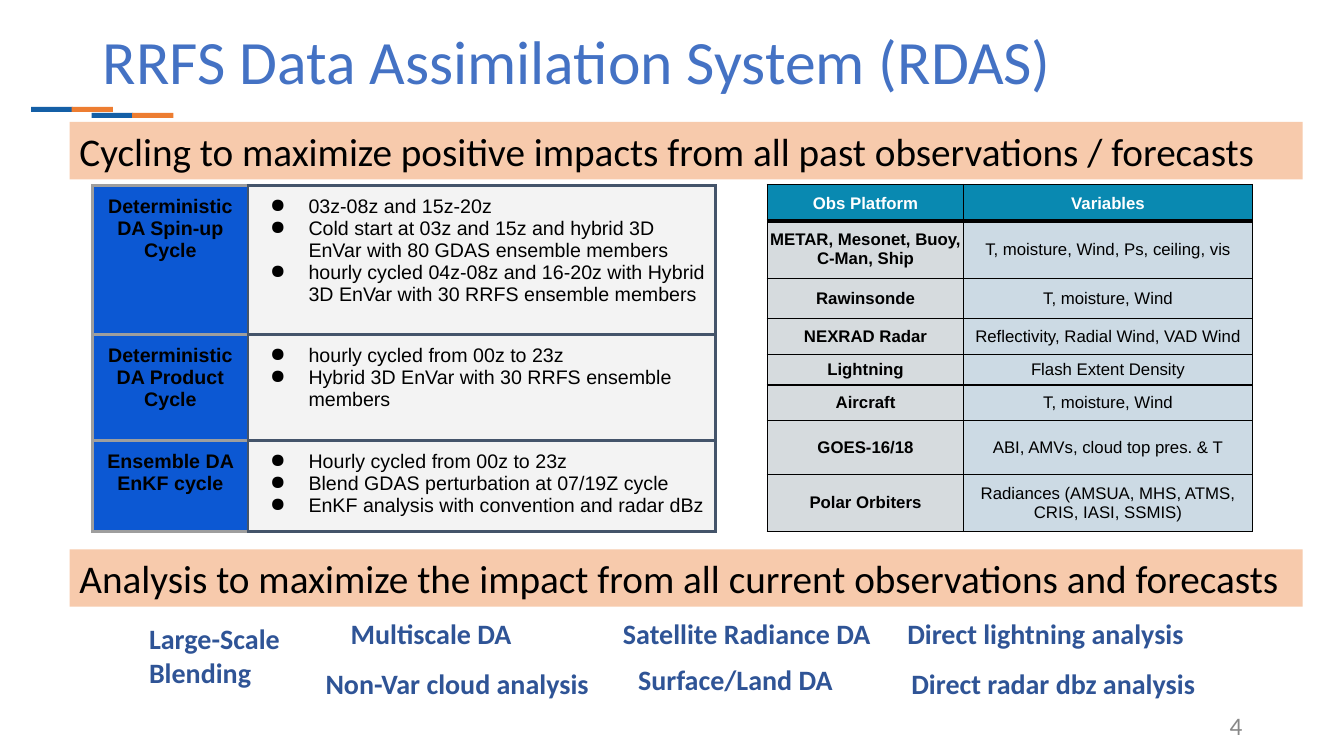
from lxml.etree import SubElement
from pptx import Presentation
from pptx.dml.color import RGBColor
from pptx.enum.shapes import MSO_SHAPE
from pptx.enum.text import MSO_ANCHOR, MSO_AUTO_SIZE, PP_ALIGN
from pptx.oxml.ns import qn
from pptx.util import Pt

PX = 9144
WHITE = RGBColor(0xFF, 0xFF, 0xFF)
BLACK = RGBColor(0x00, 0x00, 0x00)
TITLE_BLUE = RGBColor(0x44, 0x72, 0xC4)
MARK_BLUE = RGBColor(0x14, 0x5F, 0xA6)
MARK_ORANGE = RGBColor(0xED, 0x7D, 0x31)
BANNER_PEACH = RGBColor(0xF7, 0xCA, 0xAC)
TOPIC_BLUE = RGBColor(0x2F, 0x54, 0x96)
NUMBER_GRAY = RGBColor(0x88, 0x88, 0x88)
CYCLE_BLUE = RGBColor(0x0C, 0x58, 0xD3)
CYCLE_GRAY = RGBColor(0xF3, 0xF3, 0xF3)
EDGE_GRAY = RGBColor(0x9E, 0x9E, 0x9E)
EDGE_SLATE = RGBColor(0x44, 0x54, 0x6A)
HEADER_TEAL = RGBColor(0x09, 0x89, 0xB1)
PLATFORM_GRAY = RGBColor(0xD6, 0xDB, 0xDE)
VARIABLE_BLUE = RGBColor(0xCC, 0xDA, 0xE4)

CYCLES = [
    (148, "Deterministic DA Spin-up Cycle", [
        "03z-08z and 15z-20z",
        "Cold start at 03z and 15z and hybrid 3D EnVar with 80 GDAS ensemble members",
        "hourly cycled 04z-08z and 16-20z with Hybrid 3D EnVar with 30 RRFS ensemble members"]),
    (105, "Deterministic DA Product Cycle", [
        "hourly cycled from 00z to 23z",
        "Hybrid 3D EnVar with 30 RRFS ensemble members"]),
    (86, "Ensemble DA EnKF cycle", [
        "Hourly cycled from 00z to 23z",
        "Blend GDAS perturbation at 07/19Z cycle",
        "EnKF analysis with convention and radar dBz"]),
]
OBSERVATIONS = [
    (36, "Obs Platform", "Variables"),
    (57, "METAR, Mesonet, Buoy, C-Man, Ship", "T, moisture, Wind, Ps, ceiling, vis"),
    (40, "Rawinsonde", "T, moisture, Wind"),
    (36, "NEXRAD Radar", "Reflectivity, Radial Wind, VAD Wind"),
    (30, "Lightning", "Flash Extent Density"),
    (35, "Aircraft", "T, moisture, Wind"),
    (54, "GOES-16/18", "ABI, AMVs, cloud top pres. & T"),
    (56, "Polar Orbiters", "Radiances (AMSUA, MHS, ATMS, CRIS, IASI, SSMIS)"),
]
TOPICS = [
    ("Large-Scale Blending", 138, 5, 159, 77, {}),
    ("Multiscale DA", 318, 0, 219, 44, {"alignment": PP_ALIGN.CENTER}),
    ("Surface/Land DA", 623, 49, 259, 40, {"line_spacing": 0.9}),
    ("Satellite Radiance DA", 608, 0, 268, 44, {}),
    ("Direct lightning analysis", 890, 0, 322, 44, {}),
    ("Non-Var cloud analysis", 313, 49, 298, 44, {}),
    ("Direct radar dbz analysis", 894, 49, 308, 44, {}),
]


def apply(target, values):
    for name, value in values.items():
        setattr(target, name, value)


def scaled(*lengths):
    return [length * PX for length in lengths]


def write(paragraph, text, size, color, name="Calibri", bold=False, **layout):
    apply(paragraph, layout)
    run = paragraph.add_run()
    run.text = text
    apply(run.font, {"size": Pt(size), "name": name, "bold": bold})
    run.font.color.rgb = color


def add_text(slide, box, text, size, color, anchor=MSO_ANCHOR.TOP, **values):
    shape = slide.shapes.add_textbox(*scaled(*box))
    apply(shape.text_frame, {"word_wrap": True, "vertical_anchor": anchor})
    write(shape.text_frame.paragraphs[0], text, size, color, **values)


def add_block(slide, box, color):
    shape = slide.shapes.add_shape(MSO_SHAPE.RECTANGLE, *scaled(*box))
    shape.shadow.inherit = False
    shape.fill.solid()
    shape.fill.fore_color.rgb = color
    shape.line.fill.background()
    return shape


def add_title(slide, box, text):
    title = slide.shapes.title
    apply(title, dict(zip(("left", "top", "width", "height"), scaled(*box))))
    apply(title.text_frame, {"word_wrap": True, "auto_size": MSO_AUTO_SIZE.NONE,
                             "vertical_anchor": MSO_ANCHOR.MIDDLE})
    write(title.text_frame.paragraphs[0], text, 44, TITLE_BLUE,
          alignment=PP_ALIGN.LEFT, line_spacing=0.9)


def add_marks(slide, left, top):
    for shift_x, shift_y in ((0, 0), (60, 6)):
        for index, color in enumerate((MARK_BLUE, MARK_ORANGE)):
            add_block(slide, (left + shift_x + 40 * index, top + shift_y, 41, 5), color)


def add_banner(slide, box, text):
    frame = add_block(slide, box, BANNER_PEACH).text_frame
    apply(frame, {"word_wrap": True, "vertical_anchor": MSO_ANCHOR.TOP})
    write(frame.paragraphs[0], text, 28, BLACK, alignment=PP_ALIGN.LEFT)


def add_grid(slide, left, top, widths, heights):
    frame = slide.shapes.add_table(len(heights), len(widths),
                                   *scaled(left, top, sum(widths), sum(heights)))
    table = frame.table
    apply(table, {"first_row": False, "horz_banding": False})
    for column, width in zip(table.columns, widths):
        column.width = width * PX
    for row, height in zip(table.rows, heights):
        row.height = height * PX
    return table


def format_cell(cell, fill, edges, margin_x, margin_y, anchor):
    properties = cell._tc.get_or_add_tcPr()
    for side in "LRTB":
        color, width = edges[side]
        line = SubElement(properties, qn(f"a:ln{side}"), w=str(Pt(width)))
        SubElement(SubElement(line, qn("a:solidFill")), qn("a:srgbClr"), val=str(color))
    cell.fill.solid()
    cell.fill.fore_color.rgb = fill
    apply(cell, {"margin_left": margin_x * PX, "margin_right": margin_x * PX,
                 "margin_top": margin_y * PX, "margin_bottom": margin_y * PX,
                 "vertical_anchor": anchor})


def add_bullet(paragraph):
    properties = paragraph._p.get_or_add_pPr()
    properties.set("marL", str(50 * PX))
    properties.set("indent", str(-38 * PX))
    color = SubElement(properties, qn("a:buClr"))
    SubElement(color, qn("a:srgbClr"), val=str(BLACK))
    SubElement(properties, qn("a:buChar"), char="●")


def add_cycle_table(slide, left, top):
    table = add_grid(slide, left, top, (154, 464), [cycle[0] for cycle in CYCLES])
    slate = dict.fromkeys("LRTB", (EDGE_SLATE, 2.25))
    gray = {**dict.fromkeys("LTB", (EDGE_GRAY, 2.25)), "R": (EDGE_SLATE, 2.25)}
    for row, (_, name, steps) in enumerate(CYCLES):
        name_cell, steps_cell = table.cell(row, 0), table.cell(row, 1)
        format_cell(name_cell, CYCLE_BLUE, gray, 10, 10, MSO_ANCHOR.TOP)
        format_cell(steps_cell, CYCLE_GRAY, slate, 10, 10, MSO_ANCHOR.TOP)
        write(name_cell.text_frame.paragraphs[0], name, 14, BLACK, "Arial", True,
              alignment=PP_ALIGN.CENTER)
        frame = steps_cell.text_frame
        for index, step in enumerate(steps):
            paragraph = frame.add_paragraph() if index else frame.paragraphs[0]
            add_bullet(paragraph)
            write(paragraph, step, 14, BLACK, "Arial")


def add_observation_table(slide, left, top):
    table = add_grid(slide, left, top, (195, 286), [entry[0] for entry in OBSERVATIONS])
    for row, (_, *texts) in enumerate(OBSERVATIONS):
        header = row == 0
        edges = dict.fromkeys("LRTB", (BLACK, 1))
        if row < 2:
            edges["B" if header else "T"] = (BLACK, 3)
        fills = (HEADER_TEAL, HEADER_TEAL) if header else (PLATFORM_GRAY, VARIABLE_BLUE)
        for column, (text, fill) in enumerate(zip(texts, fills)):
            cell = table.cell(row, column)
            format_cell(cell, fill, edges, 5 if header else 0, 0, MSO_ANCHOR.MIDDLE)
            write(cell.text_frame.paragraphs[0], text, 12, WHITE if header else BLACK,
                  "Arial", header or column == 0, alignment=PP_ALIGN.CENTER,
                  line_spacing=1.15 if header else 1.0)


def add_topics(slide, top):
    for text, left, offset, width, height, layout in TOPICS:
        add_text(slide, (left, top + offset, width, height), text, 20, TOPIC_BLUE,
                 bold=True, **layout)


def main():
    presentation = Presentation()
    apply(presentation, {"slide_width": 1333 * PX, "slide_height": 750 * PX})
    slide = presentation.slides.add_slide(presentation.slide_layouts[5])
    add_marks(slide, 31, 106)
    add_title(slide, (92, 26, 1150, 77), "RRFS Data Assimilation System (RDAS)")
    add_text(slide, (1179, 700, 63, 40), "4", 18, NUMBER_GRAY, MSO_ANCHOR.MIDDLE,
             alignment=PP_ALIGN.RIGHT)
    add_cycle_table(slide, 92, 184)
    add_observation_table(slide, 761, 183)
    add_banner(slide, (69, 121, 1223, 57),
               "Cycling to maximize positive impacts from all past observations / forecasts")
    add_banner(slide, (69, 545, 1223, 57),
               "Analysis to maximize the impact from all current observations and forecasts")
    add_topics(slide, 607)
    presentation.save("out.pptx")


if __name__ == "__main__":
    main()
